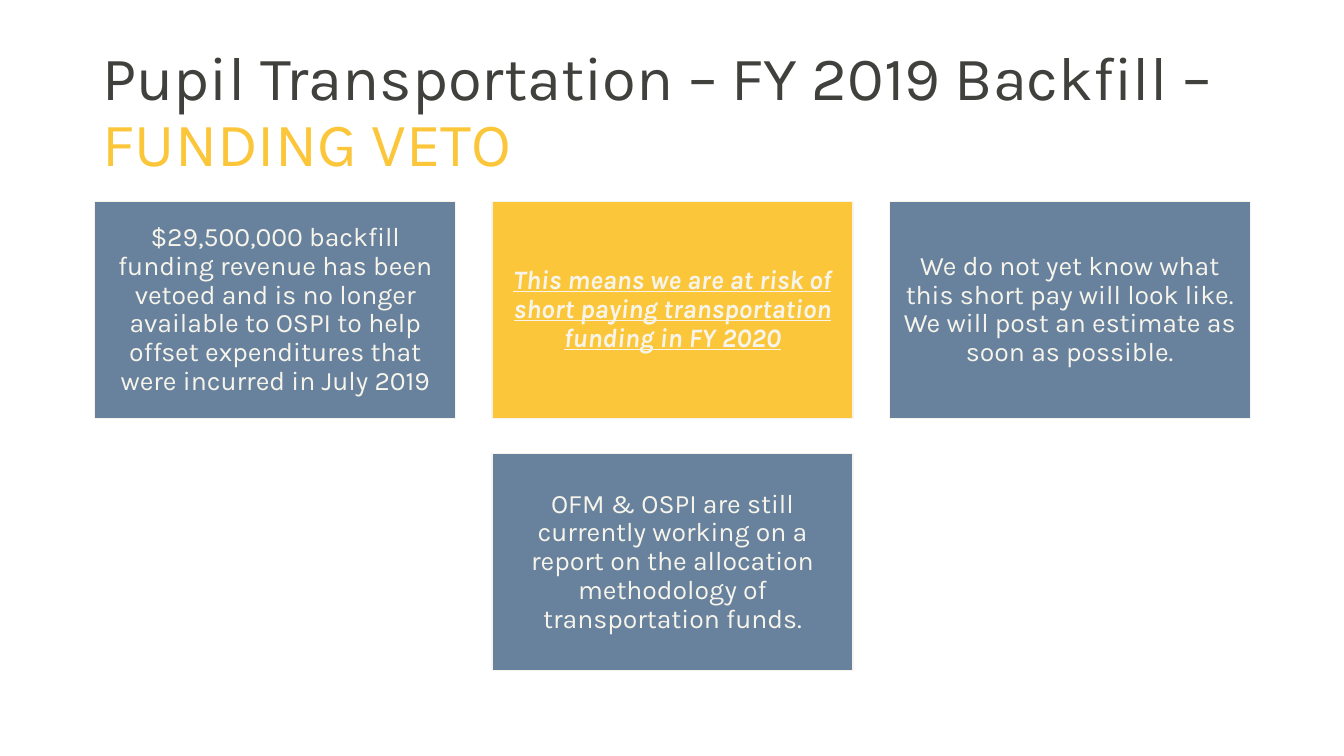
"""Build the pupil transportation funding veto slide."""
from dataclasses import dataclass, field
from typing import Any

from pptx import Presentation
from pptx.dml.color import RGBColor
from pptx.enum.shapes import MSO_SHAPE
from pptx.enum.text import MSO_ANCHOR, PP_ALIGN
from pptx.util import Emu, Pt

RECTANGLE = MSO_SHAPE.RECTANGLE
MIDDLE = MSO_ANCHOR.MIDDLE
LEFT, CENTER = PP_ALIGN.LEFT, PP_ALIGN.CENTER

EMU_PER_PX = 9144
FONT = "Karla"
CHARCOAL, YELLOW, BLUE, CREAM = "40403D", "FBC639", "68829E", "F7F5EB"
GRID_LEFT, GRID_TOP = 94, 200
COLUMN_PITCH, ROW_PITCH = 394, 250
CARD_WIDTH, CARD_HEIGHT, CARD_INSET = 358, 215, 8
EMPHASIS = {"bold": True, "italic": True, "underline": True}


@dataclass(frozen=True)
class Span:
    text: str
    color: str
    size: int
    format: dict[str, Any] = field(default_factory=dict)


@dataclass(frozen=True)
class Card:
    column: int
    row: int
    text: str
    fill: str = BLUE
    format: dict[str, Any] = field(default_factory=dict)


TITLE = [
    Span("Pupil Transportation – FY 2019 Backfill – ", CHARCOAL, 44),
    Span("FUNDING VETO", YELLOW, 44),
]
CARDS = [
    Card(0, 0, "$29,500,000 backfill funding revenue has been vetoed and is no longer "
               "available to OSPI to help offset expenditures that were incurred in July 2019"),
    Card(1, 0, "This means we are at risk of short paying transportation funding in FY 2020",
         YELLOW, EMPHASIS),
    Card(2, 0, "We do not yet know what this short pay will look like. "
               "We will post an estimate as soon as possible."),
    Card(1, 1, "OFM & OSPI are still currently working on a report on the allocation "
               "methodology of transportation funds."),
]


def px(length: int) -> Emu:
    return Emu(length * EMU_PER_PX)


def rgb(color: str) -> RGBColor:
    return RGBColor.from_string(color)


def write(box: Any, spans: list[Span], alignment: PP_ALIGN) -> None:
    frame = box.text_frame
    frame.word_wrap = True
    frame.vertical_anchor = MIDDLE
    para = frame.paragraphs[0]
    para.alignment = alignment
    para.line_spacing = 0.9
    for span in spans:
        run = para.add_run()
        run.text = span.text
        run.font.color.rgb = rgb(span.color)
        for name, value in {"name": FONT, "size": Pt(span.size), **span.format}.items():
            setattr(run.font, name, value)


def draw_card(page: Any, card: Card) -> None:
    box = page.shapes.add_shape(
        RECTANGLE,
        px(GRID_LEFT + card.column * COLUMN_PITCH),
        px(GRID_TOP + card.row * ROW_PITCH),
        px(CARD_WIDTH),
        px(CARD_HEIGHT),
    )
    box.shadow.inherit = False
    box.fill.solid()
    box.fill.fore_color.rgb = rgb(card.fill)
    box.line.color.rgb = rgb(CREAM)
    box.line.width = Pt(1)
    for side in ("left", "top", "right", "bottom"):
        setattr(box.text_frame, f"margin_{side}", px(CARD_INSET))
    write(box, [Span(card.text, CREAM, 19, card.format)], CENTER)


def main() -> None:
    deck = Presentation()
    deck.slide_width, deck.slide_height = px(1333), px(750)
    page = deck.slides.add_slide(deck.slide_layouts[6])
    title = page.shapes.add_textbox(px(92), px(40), px(1150), px(145))
    write(title, TITLE, LEFT)
    for card in CARDS:
        draw_card(page, card)
    deck.save("out.pptx")


if __name__ == "__main__":
    main()
